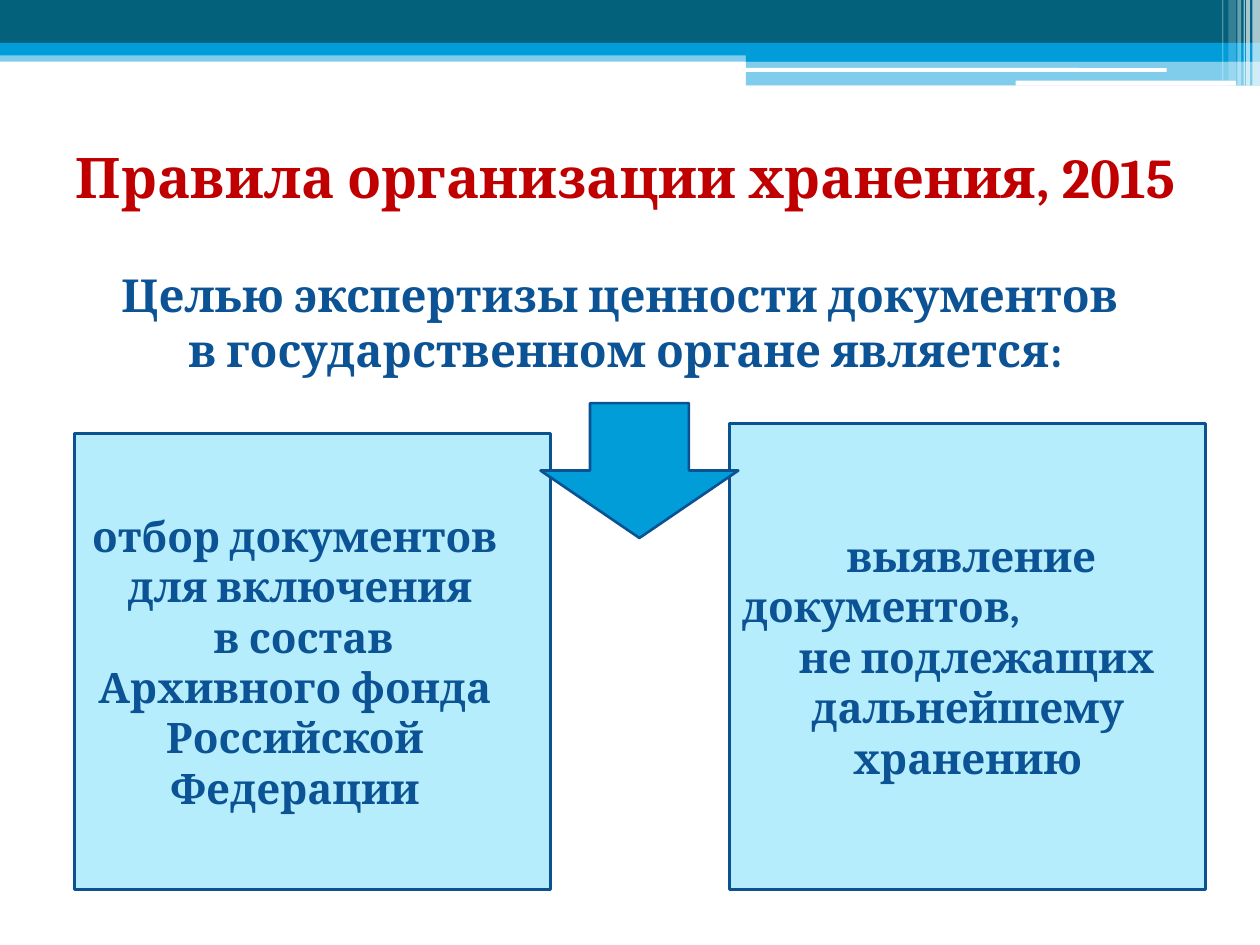
from dataclasses import dataclass

from lxml.etree import SubElement
from pptx import Presentation
from pptx.dml.color import RGBColor
from pptx.enum.shapes import MSO_SHAPE
from pptx.enum.text import MSO_ANCHOR, PP_ALIGN
from pptx.oxml.ns import qn
from pptx.util import Emu, Inches, Pt


@dataclass(frozen=True)
class Theme:
    """Colours, font and type sizes of the slide."""
    font: str = "Cambria"
    white: str = "FFFFFF"
    teal: str = "04617B"
    blue: str = "009DD9"
    pale: str = "B5EDFD"
    outline: str = "0B5292"
    ink: str = "0B5394"
    red: str = "C00000"
    title: int = 32
    lead: int = 26
    body: int = 24
    stroke: float = 1.5


def write_line(paragraph, text, *, theme, size, color, align=PP_ALIGN.CENTER, before=0, shift=0):
    """Write one bold line; shift moves its centre right (or left if negative) in inches."""
    paragraph.alignment = align
    paragraph.space_before = Pt(before)
    if shift:
        side = "marL" if shift > 0 else "marR"
        paragraph._p.get_or_add_pPr().set(side, str(Inches(2 * abs(shift))))
    run = paragraph.add_run()
    run.text = text
    run.font.name = theme.font
    run.font.size = Pt(size)
    run.font.bold = True
    run.font.color.rgb = RGBColor.from_string(color)


class SlideBuilder:
    """Draws elements on one slide, placed on a grid of 100 columns by 75 rows."""

    COLUMNS, ROWS = 100, 75

    def __init__(self, deck, theme):
        """Add a blank slide to the deck."""
        self.theme = theme
        self.slide = deck.slides.add_slide(deck.slide_layouts[6])
        self.column = deck.slide_width / self.COLUMNS
        self.row = deck.slide_height / self.ROWS

    def block(self, place, fill, kind=MSO_SHAPE.RECTANGLE, opacity=100, line=None):
        """Draw a filled preset shape."""
        left, top, width, height = place
        shape = self.slide.shapes.add_shape(
            kind, Emu(round(left * self.column)), Emu(round(top * self.row)),
            Emu(round(width * self.column)), Emu(round(height * self.row)))
        shape.shadow.inherit = False
        shape.fill.solid()
        shape.fill.fore_color.rgb = RGBColor.from_string(fill)
        if opacity < 100:
            tint = shape.fill._xPr.find(qn("a:solidFill"))[0]
            SubElement(tint, qn("a:alpha")).set("val", str(opacity * 1000))
        if line:
            shape.line.color.rgb = RGBColor.from_string(line)
            shape.line.width = Pt(self.theme.stroke)
        else:
            shape.line.fill.background()
        return shape

    def panel(self, place, lines, fill, line=None, anchor=MSO_ANCHOR.MIDDLE, inset=0.05):
        """Draw a block holding lines of (text, format)."""
        frame = self.block(place, fill, line=line).text_frame
        frame.word_wrap = True
        frame.vertical_anchor = anchor
        frame.margin_top = Inches(inset)
        for index, (text, style) in enumerate(lines):
            paragraph = frame.add_paragraph() if index else frame.paragraphs[0]
            write_line(paragraph, text, theme=self.theme, **style)

    def header(self):
        """Draw the banded header with its stripes at the right edge."""
        t = self.theme
        for place, fill, opacity in (
            ((0, 4, 100, 0.9), t.blue, 50),
            ((0, 0, 100, 3.4), t.teal, 100),
            ((0, 3.4, 100, 1), t.blue, 100),
            ((59.2, 3.9, 40.8, 1), t.blue, 100),
            ((59.2, 4.8, 40.8, 2), t.blue, 50),
        ):
            self.block(place, fill, opacity=opacity)
        for place in ((59.1, 5.4, 33.5, 0.3), (80.6, 6.4, 17.5, 0.4)):
            self.block(place, t.white, kind=MSO_SHAPE.ROUNDED_RECTANGLE)
        for left, width, height, opacity in (
            (99.4, 0.6, 6.8, 65), (98.9, 0.3, 6.8, 65), (98.7, 0.1, 6.8, 60),
            (98.2, 0.3, 6.8, 40), (97.5, 0.6, 6.4, 20), (97, 0.1, 6.4, 30),
        ):
            self.block((left, 0, width, height), t.white, opacity=opacity)


def main():
    """Build the slide and save it."""
    deck = Presentation()
    deck.slide_width, deck.slide_height = Inches(10), Inches(7.5)
    theme = Theme()
    page = SlideBuilder(deck, theme)
    page.header()

    title = {"size": theme.title, "color": theme.red}
    lead = {"size": theme.lead, "color": theme.ink}
    body = {"size": theme.body, "color": theme.ink}
    page.panel((2, 6.8, 95.3, 44.1), [
        ("Правила организации хранения, 2015", title),
        ("Целью экспертизы ценности документов ", {**lead, "before": 33}),
        ("в государственном органе является:", lead),
    ], theme.white, anchor=MSO_ANCHOR.TOP, inset=0.45)

    page.panel((5.9, 34.4, 37.8, 36.2), [
        ("отбор документов", {**body, "shift": -0.14}),
        ("для включения", {**body, "shift": 0.04}),
        ("в состав", {**body, "shift": 0.07}),
        ("Архивного фонда", body),
        ("Российской", body),
        ("Федерации", body),
    ], theme.pale, line=theme.outline)

    page.panel((57.9, 33.6, 37.8, 37), [
        ("выявление", {**body, "shift": 0.03}),
        ("документов,", {**body, "align": PP_ALIGN.LEFT}),
        ("не подлежащих", {**body, "shift": 0.07}),
        ("дальнейшему", body),
        ("хранению", body),
    ], theme.pale, line=theme.outline)

    page.block((42.9, 32, 15.7, 10.7), theme.blue, kind=MSO_SHAPE.DOWN_ARROW, line=theme.outline)
    deck.save("out.pptx")


if __name__ == "__main__":
    main()
